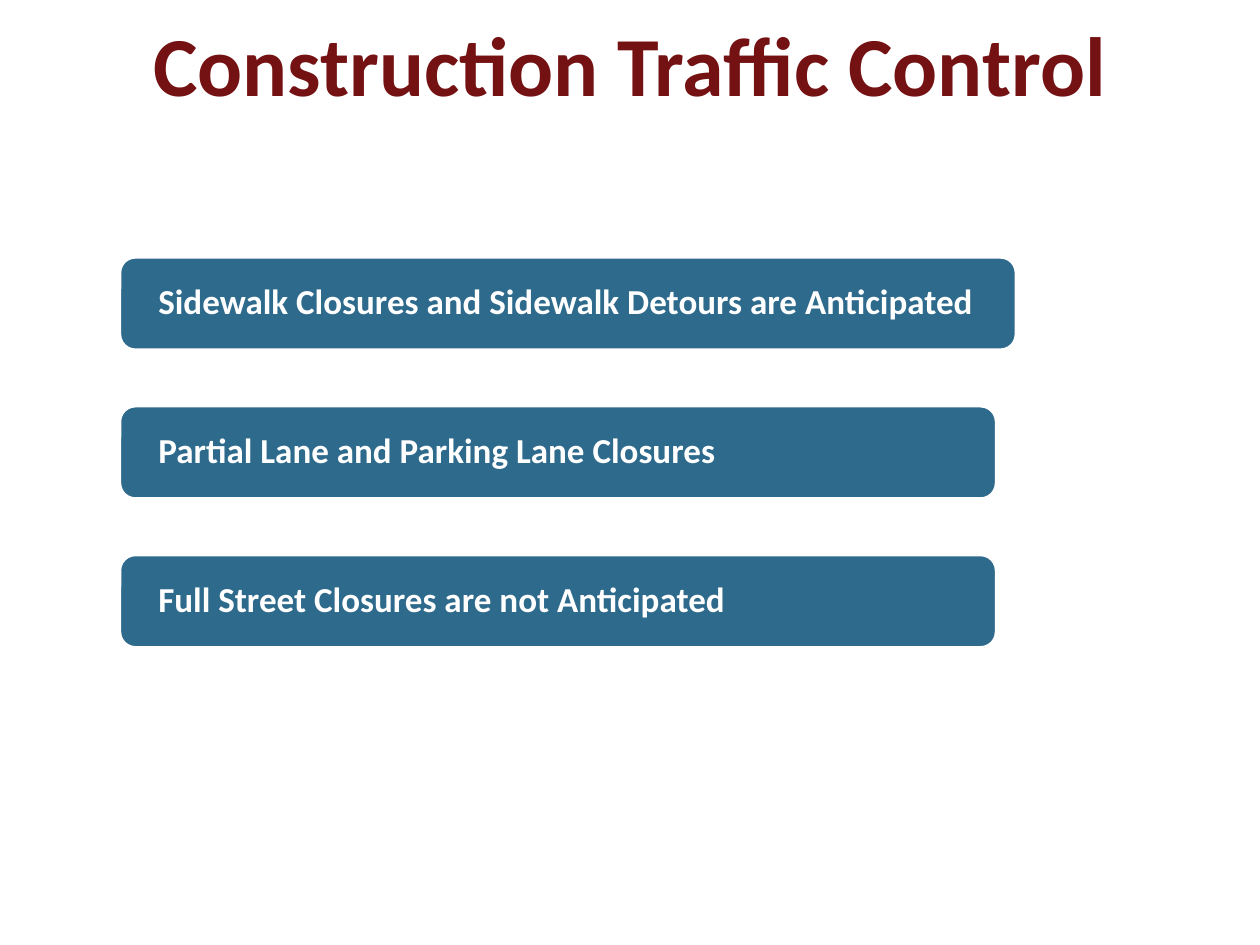
import pptx
import pptx.dml.color
import pptx.enum.shapes
import pptx.enum.text
import pptx.util
from pptx.util import Cm

MAROON = pptx.dml.color.RGBColor(0x74, 0x11, 0x12)
BLUE = pptx.dml.color.RGBColor(0x2E, 0x6A, 0x8C)
WHITE = pptx.dml.color.RGBColor(0xFF, 0xFF, 0xFF)

TITLE_ONLY = 5
SLIDE_WIDTH, SLIDE_HEIGHT = Cm(25.4), Cm(19.05)
BAR_HEIGHT = Cm(1.88)
BAR_STEP = Cm(3)
CORNER_RADIUS = Cm(0.32)

NOTICES = [
    ("Sidewalk Closures and Sidewalk Detours are Anticipated", Cm(18.08)),
    ("Partial Lane and Parking Lane Closures", Cm(17.68)),
    ("Full Street Closures are not Anticipated", Cm(17.68)),
]


def write_text(shape, text, *, size, color, align, line_spacing=1.0,
               margin_x=Cm(0.25), margin_y=Cm(0.13)):
    frame = shape.text_frame
    frame.word_wrap = True
    frame.auto_size = pptx.enum.text.MSO_AUTO_SIZE.NONE
    frame.vertical_anchor = pptx.enum.text.MSO_ANCHOR.MIDDLE
    frame.margin_left = frame.margin_right = margin_x
    frame.margin_top = frame.margin_bottom = margin_y
    para = frame.paragraphs[0]
    para.alignment = align
    para.line_spacing = line_spacing
    para.space_before = pptx.util.Pt(0)
    span = para.add_run()
    span.text = text
    span.font.name = "Calibri"
    span.font.size = pptx.util.Pt(size)
    span.font.bold = True
    span.font.color.rgb = color


def place_title(page, text, left, top, width, height):
    title = page.shapes.title
    title.left, title.top, title.width, title.height = left, top, width, height
    write_text(title, text, size=48, color=MAROON,
               align=pptx.enum.text.PP_ALIGN.CENTER)


def add_notice_bars(page, notices, left, top):
    """Stack one rounded bar per notice, downwards from the given corner."""
    for row, (text, width) in enumerate(notices):
        bar = page.shapes.add_shape(
            pptx.enum.shapes.MSO_SHAPE.ROUNDED_RECTANGLE,
            left, top + row * BAR_STEP, width, BAR_HEIGHT)
        bar.adjustments[0] = CORNER_RADIUS / BAR_HEIGHT
        bar.shadow.inherit = False
        bar.fill.solid()
        bar.fill.fore_color.rgb = BLUE
        bar.line.color.rgb = WHITE
        bar.line.width = pptx.util.Pt(2)
        write_text(bar, text, size=20, color=WHITE, line_spacing=0.9,
                   align=pptx.enum.text.PP_ALIGN.LEFT,
                   margin_x=Cm(0.69), margin_y=Cm(0.1))


def main():
    deck = pptx.Presentation()
    deck.slide_width, deck.slide_height = SLIDE_WIDTH, SLIDE_HEIGHT
    page = deck.slides.add_slide(deck.slide_layouts[TITLE_ONLY])
    place_title(page, "Construction Traffic Control",
                Cm(0), Cm(0), SLIDE_WIDTH, Cm(2.54))
    add_notice_bars(page, NOTICES, Cm(2.41), Cm(5.18))
    deck.save("out.pptx")


if __name__ == "__main__":
    main()
